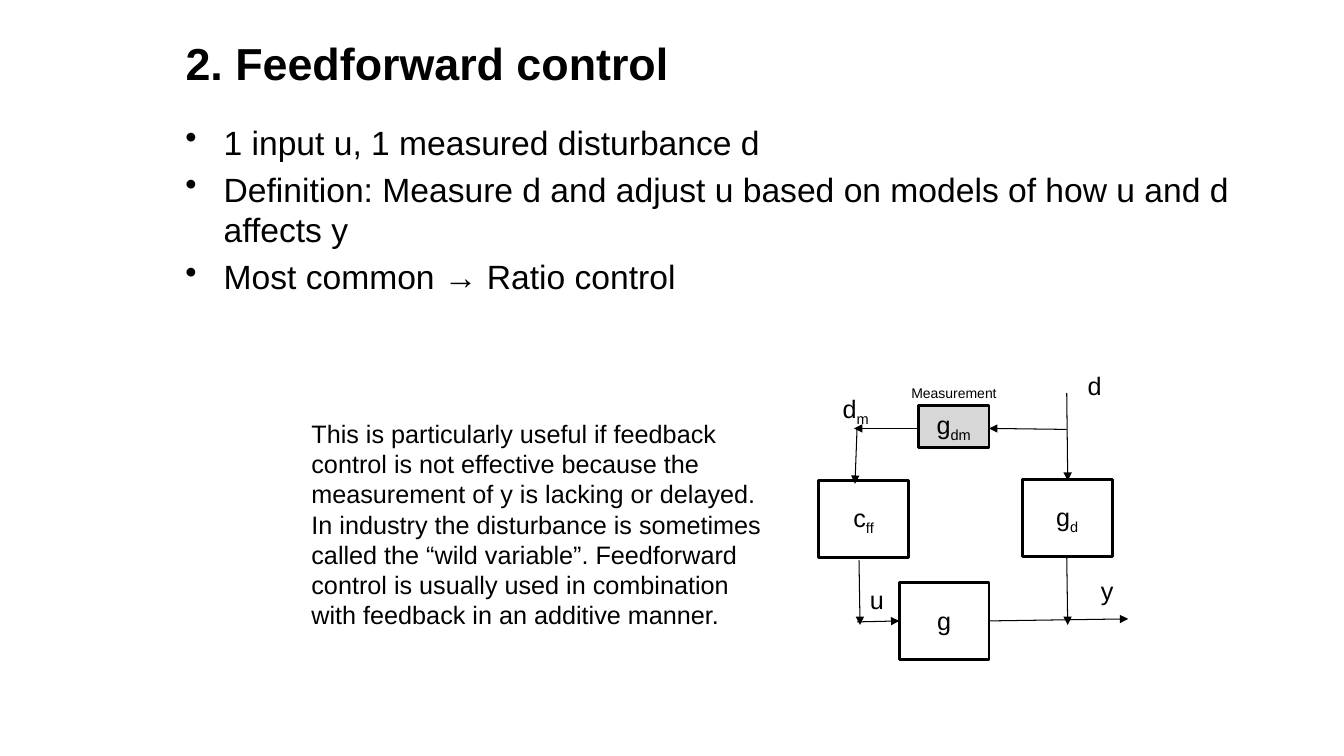
"""Build a slide on feedforward control with its block diagram."""
from lxml import etree
from pptx import Presentation
from pptx.dml.color import RGBColor
from pptx.enum import shapes, text
from pptx.oxml.ns import qn
from pptx.util import Inches, Pt

COLORS = {"ink": "000000", "paper": "FFFFFF", "sensor": "D6D7D6"}


def write(shape, lines, size=18, bold=False, align=text.PP_ALIGN.LEFT,
          anchor=text.MSO_ANCHOR.TOP, wrap=True, bullet=None, gap=0):
    """Fill a shape with lines; an underscore starts a subscript."""
    frame = shape.text_frame
    frame.word_wrap = wrap
    frame.vertical_anchor = anchor
    for index, line in enumerate(lines):
        paragraph = frame.add_paragraph() if index else frame.paragraphs[0]
        paragraph.alignment = align
        if bullet:
            properties = paragraph._p.get_or_add_pPr()
            properties.set("marL", str(Inches(0.38)))
            properties.set("indent", str(-Inches(0.38)))
            etree.SubElement(properties, qn("a:buChar")).set("char", bullet)
        if index:
            paragraph.space_before = Pt(gap)
        for level, part in enumerate(line.split("_")):
            run = paragraph.add_run()
            run.text = part
            run.font.name = "Arial"
            run.font.size = Pt(size)
            run.font.bold = bold
            run.font.color.rgb = RGBColor.from_string(COLORS["ink"])
            if level:
                run._r.get_or_add_rPr().set("baseline", "-25000")


presentation = Presentation()
presentation.slide_width = Inches(13.33)
presentation.slide_height = Inches(7.5)
slide = presentation.slides.add_slide(presentation.slide_layouts[5])

title = slide.shapes.title
title.left, title.top = Inches(1.74), Inches(0.3)
title.width, title.height = Inches(10.8), Inches(0.64)
write(title, ["2. Feedforward control"], size=32, bold=True,
      anchor=text.MSO_ANCHOR.MIDDLE)

points = slide.shapes.add_textbox(Inches(1.74), Inches(1.16), Inches(10.8), Inches(5.86))
write(points, [
    "1 input u, 1 measured disturbance d",
    "Definition: Measure d and adjust u based on models of how u and d affects y",
    "Most common → Ratio control",
], size=24, bullet="•", gap=4.8)

remark = slide.shapes.add_textbox(Inches(2.99), Inches(4.1), Inches(4.81), Inches(2.22))
write(remark, [
    "This is particularly useful if feedback control is not effective because the "
    "measurement of y is lacking or delayed. In industry the disturbance is sometimes "
    "called the “wild variable”. Feedforward control is usually used in combination "
    "with feedback in an additive manner."
])

diagram = slide.shapes.add_group_shape().shapes

blocks = [
    ("g", 8.92, 5.78, 0.89, 0.76, "paper"),
    ("g_d", 10.14, 4.76, 0.89, 0.76, "paper"),
    ("c_ff", 8.12, 4.77, 0.89, 0.76, "paper"),
    ("g_dm", 9.11, 4.02, 0.7, 0.42, "sensor"),
]
for name, left, top, width, height, fill in blocks:
    block = diagram.add_shape(shapes.MSO_SHAPE.RECTANGLE, Inches(left), Inches(top),
                              Inches(width), Inches(height))
    block.shadow.inherit = False
    block.fill.solid()
    block.fill.fore_color.rgb = RGBColor.from_string(COLORS[fill])
    block.line.color.rgb = RGBColor.from_string(COLORS["ink"])
    block.line.width = Pt(2)
    write(block, [name], align=text.PP_ALIGN.CENTER, anchor=text.MSO_ANCHOR.MIDDLE)

signals = [
    (8.5, 6.17, 8.92, 6.16),
    (9.81, 6.16, 11.19, 6.14),
    (8.52, 5.56, 8.53, 6.2),
    (10.58, 4.26, 9.81, 4.25),
    (10.58, 5.52, 10.59, 6.2),
    (10.58, 3.9, 10.59, 4.77),
    (9.11, 4.25, 8.47, 4.25),
    (8.5, 4.26, 8.48, 4.8),
]
for ends in signals:
    arrow = diagram.add_connector(shapes.MSO_CONNECTOR.STRAIGHT, *map(Inches, ends))
    arrow.line.color.rgb = RGBColor.from_string(COLORS["ink"])
    arrow.line.width = Pt(0.75)
    etree.SubElement(arrow.line._get_or_add_ln(), qn("a:tailEnd")).set("type", "triangle")
    etree.SubElement(arrow._element.spPr, qn("a:effectLst"))

labels = [
    ("d", 10.69, 3.62, 0.34, 0.4, 18),
    ("y", 10.82, 5.66, 0.33, 0.4, 18),
    ("u", 8.53, 5.75, 0.34, 0.4, 18),
    ("Measurement", 8.94, 3.77, 1.06, 0.27, 10),
    ("d_m", 8.26, 3.85, 0.48, 0.4, 18),
]
for name, left, top, width, height, size in labels:
    label = diagram.add_textbox(Inches(left), Inches(top), Inches(width), Inches(height))
    write(label, [name], size=size, wrap=False)

presentation.save("out.pptx")
